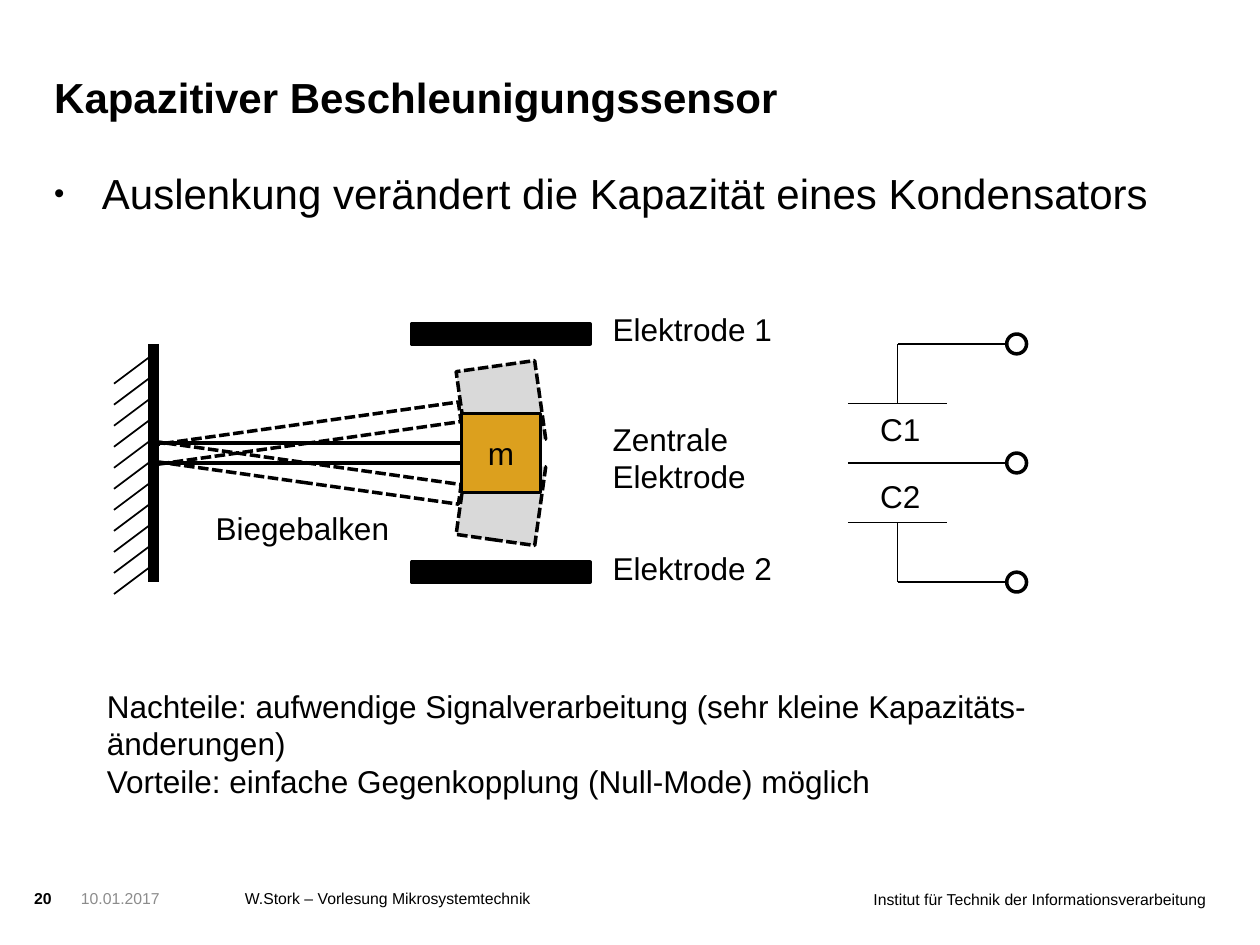
from pptx import Presentation
from pptx.dml.color import RGBColor
from pptx.enum.dml import MSO_LINE
from pptx.enum.shapes import MSO_CONNECTOR, MSO_SHAPE
from pptx.enum.text import MSO_ANCHOR, PP_ALIGN
from pptx.oxml.ns import qn
from pptx.util import Inches, Pt

RECT, ELLIPSE = MSO_SHAPE.RECTANGLE, MSO_SHAPE.OVAL
LINE = MSO_CONNECTOR.STRAIGHT
DASH = MSO_LINE.SQUARE_DOT
LEFT, CENTER, RIGHT = PP_ALIGN.LEFT, PP_ALIGN.CENTER, PP_ALIGN.RIGHT
TOP, MIDDLE, BOTTOM = MSO_ANCHOR.TOP, MSO_ANCHOR.MIDDLE, MSO_ANCHOR.BOTTOM
SIDES = ("margin_left", "margin_top", "margin_right", "margin_bottom")
BLACK, GRAY, SILVER, GOLD = "000000", "8C8C8C", "D9D9D9", "DCA01E"
W, H = 10, 7.5
U = 0.63 / 4


def rgb(value):
    return RGBColor.from_string(value)


def cells(box, col, row, cols, rows):
    return box[0] + col * U, box[1] + row * U, cols * U, rows * U


def fill_text(tf, lines, size=18, color=BLACK, bold=False, align=LEFT):
    fmt = {"name": "Arial", "size": Pt(size), "bold": bold}
    for i, line in enumerate(lines):
        p = tf.paragraphs[0] if i == 0 else tf.add_paragraph()
        p.alignment = align
        r = p.add_run()
        r.text = line
        for key, value in fmt.items():
            setattr(r.font, key, value)
        r.font.color.rgb = rgb(color)


def add_text(s, box, lines, inset=(0, 0), wrap=True, anchor=TOP, **fmt):
    tf = s.shapes.add_textbox(*map(Inches, box)).text_frame
    tf.word_wrap = wrap
    tf.vertical_anchor = anchor
    for side, value in zip(SIDES, inset * 2):
        setattr(tf, side, Inches(value))
    fill_text(tf, lines, **fmt)
    return tf


def add_label(s, box, col, row, width, *lines):
    x, y = cells(box, col, row, 0, 0)[:2]
    height = 0.1 + 0.3 * len(lines)
    add_text(s, (x, y, width, height), lines, inset=(0.1, 0.05), wrap=False)


def add_block(s, box, kind=RECT, fill=None, dash=None, turn=0):
    sp = s.shapes.add_shape(kind, *map(Inches, box))
    sp.shadow.inherit = False
    sp.rotation = turn
    if fill:
        sp.fill.solid()
        sp.fill.fore_color.rgb = rgb(fill)
    else:
        sp.fill.background()
    sp.line.color.rgb = rgb(BLACK)
    sp.line.width = Pt(2)
    if dash:
        sp.line.dash_style = dash
    return sp


def add_line(s, box, start, end, width=1):
    ends = [Inches(box[i] + at[i] * U) for at in (start, end) for i in (0, 1)]
    c = s.shapes.add_connector(LINE, *ends)
    c.line.color.rgb = rgb(BLACK)
    c.line.width = Pt(width)
    sp_pr = c._element.spPr
    sp_pr.append(sp_pr.makeelement(qn("a:effectLst"), {}))


def add_heading(s, box):
    x, y, w, h = box
    add_text(s, (x, y, 0.83 * w, 0.45 * h), ["Kapazitiver Beschleunigungssensor"],
             anchor=BOTTOM, size=24, bold=True)
    tf = add_text(s, (x, y + 0.72 * h, w, 0.28 * h),
                  ["Auslenkung verändert die Kapazität eines Kondensators"], size=24)
    p_pr = tf.paragraphs[0]._p.get_or_add_pPr()
    p_pr.set("marL", str(Inches(0.38)))
    p_pr.set("indent", str(Inches(-0.38)))
    for tag, attrs in (("a:buSzPct", {"val": "70000"}),
                       ("a:buFont", {"typeface": "Arial"}),
                       ("a:buChar", {"char": "•"})):
        p_pr.append(p_pr.makeelement(qn(tag), attrs))


def add_beam(s, box, side):
    dash = DASH if side else None
    add_block(s, cells(box, 0, 5 + side, 15.5, 1), dash=dash, turn=8 * side)
    sp = add_block(s, cells(box, 15.5, 3.5 + 2.4 * side, 4, 4),
                   fill=SILVER if side else GOLD, dash=dash, turn=8 * side)
    if not side:
        sp.text_frame.vertical_anchor = MIDDLE
        fill_text(sp.text_frame, ["m"], align=CENTER)


def add_sensor(s, box):
    add_line(s, box, (0, 0), (0, 12), width=6)
    for i in range(11):
        row = 0.5 + 1.06 * i
        add_line(s, box, (0, row), (-2, row + 1.5))
    for row in (-1, 11):
        add_block(s, cells(box, 13, row, 9, 1), fill=BLACK)
    for side in (1, -1, 0):
        add_beam(s, box, side)
    add_label(s, box, 2.5, 8, 1.59, "Biegebalken")
    add_label(s, box, 22.5, -2, 1.48, "Elektrode 1")
    add_label(s, box, 22.5, 10, 1.48, "Elektrode 2")
    add_label(s, box, 22.5, 3.5, 1.27, "Zentrale", "Elektrode")


def add_circuit(s, box):
    for end, plate in ((0, 3), (12, 9)):
        add_line(s, box, (8, end), (2.5, end))
        add_line(s, box, (2.5, end), (2.5, plate))
        add_line(s, box, (0, plate), (5, plate))
    add_line(s, box, (0, 6), (8, 6))
    for row in (0, 6, 12):
        add_block(s, cells(box, 8, row - 0.5, 1, 1), kind=ELLIPSE)
    add_label(s, box, 1, 3, 0.52, "C1")
    add_label(s, box, 1, 6.4, 0.52, "C2")


def add_summary(s, box):
    add_text(s, box, [
        "Nachteile: aufwendige Signalverarbeitung (sehr kleine Kapazitäts-änderungen)",
        "Vorteile: einfache Gegenkopplung (Null-Mode) möglich",
    ], inset=(0.1, 0.05))


def add_footer(s, box):
    x, y, w, h = box
    for left, width, text, fmt in (
        (0, 0.04, "20", {"bold": True}),
        (0.04, 0.12, "10.01.2017", {"color": GRAY}),
        (0.18, 0.32, "W.Stork – Vorlesung Mikrosystemtechnik", {}),
        (0.65, 0.35, "Institut für Technik der Informationsverarbeitung",
         {"align": RIGHT}),
    ):
        drop = 0.01 if fmt.get("align") else 0
        add_text(s, (x + left * w, y + drop, width * w, h), [text], size=9, **fmt)


def main():
    prs = Presentation()
    prs.slide_width, prs.slide_height = Inches(W), Inches(H)
    s = prs.slides.add_slide(prs.slide_layouts[6])
    add_heading(s, (0.043 * W, 0.048 * H, 0.914 * W, 0.18 * H))
    add_sensor(s, (0.122 * W, 0.364 * H))
    add_circuit(s, (0.673 * W, 0.364 * H))
    add_summary(s, (0.075 * W, 0.72 * H, 0.868 * W, 0.19 * H))
    add_footer(s, (0.027 * W, 0.94 * H, 0.93 * W, 0.05 * H))
    prs.save("out.pptx")


if __name__ == "__main__":
    main()
